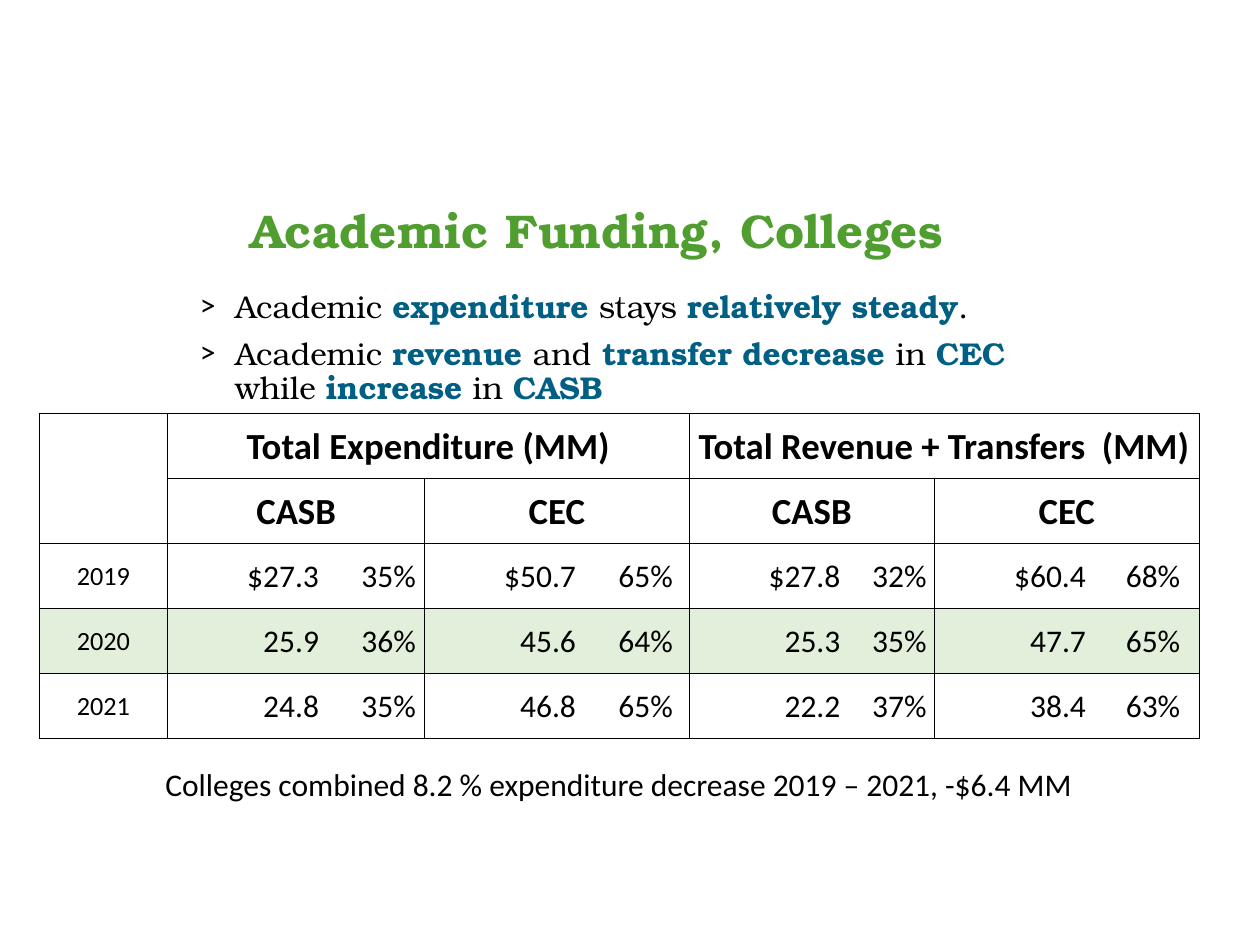
from lxml import etree
from pptx import Presentation
from pptx.dml.color import RGBColor
from pptx.enum.text import MSO_ANCHOR, MSO_AUTO_SIZE, PP_ALIGN
from pptx.oxml.ns import qn
from pptx.util import Cm, Pt

CENTER, LEFT = PP_ALIGN.CENTER, PP_ALIGN.LEFT
TOP, MIDDLE = MSO_ANCHOR.TOP, MSO_ANCHOR.MIDDLE
NO_AUTOFIT, GROW = MSO_AUTO_SIZE.NONE, MSO_AUTO_SIZE.SHAPE_TO_FIT_TEXT
SERIF, SANS = "TeX Gyre Bonum", "Calibri"
BLACK, BLUE, GREEN, PALE_GREEN = "000000", "005F83", "509E2F", "E2EFDA"


def write(paragraph, text, font=SANS, size=18, color=BLACK, bold=False, align=LEFT):
    """Add text to a paragraph; parts between asterisks become bold and blue."""
    paragraph.alignment = align
    for index, part in enumerate(text.split("*")):
        if part:
            run = paragraph.add_run()
            run.text = part
            run.font.name, run.font.size = font, Pt(size)
            run.font.bold = bold or index % 2 == 1
            run.font.color.rgb = RGBColor.from_string(BLUE if index % 2 else color)


def set_borders(cell, sides):
    """Draw thin black borders on the given sides and clear the others."""
    properties = cell._tc.get_or_add_tcPr()
    for side in "LRTB":
        line = etree.SubElement(properties, qn(f"a:ln{side}"), w=str(Pt(0.5)))
        if side in sides:
            fill = etree.SubElement(line, qn("a:solidFill"))
            etree.SubElement(fill, qn("a:srgbClr"), val=BLACK)
        else:
            etree.SubElement(line, qn("a:noFill"))


prs = Presentation()
prs.slide_width, prs.slide_height = Cm(25.4), Cm(19.05)
slide = prs.slides.add_slide(prs.slide_layouts[5])

# Title
title = slide.shapes.title
title.left, title.top, title.width, title.height = Cm(4.29), Cm(4.06), Cm(15.47), Cm(1.57)
title.text_frame.auto_size = NO_AUTOFIT
title.text_frame.vertical_anchor = TOP
heading = title.text_frame.paragraphs[0]
heading.line_spacing = 0.9
write(heading, "Academic Funding, Colleges", font=SERIF, size=27, color=GREEN,
      bold=True, align=CENTER)

# Funding table
column_widths = [2.59, 3.73, 1.45, 3.58, 1.75, 3.53, 1.42, 3.48, 1.85]
row_height = 1.31
funding = slide.shapes.add_table(5, 9, Cm(0.79), Cm(8.33),
                                 Cm(sum(column_widths)), Cm(5 * row_height)).table
funding.first_row = funding.horz_banding = False
for column, width in zip(funding.columns, column_widths):
    column.width = Cm(width)
for row in funding.rows:
    row.height = Cm(row_height)

# Headers: two groups of two colleges, each college over an amount and a share
headers = [(0, 1, 4, "Total Expenditure (MM)"), (0, 5, 4, "Total Revenue + Transfers  (MM)")]
headers += [(1, 1 + 2 * i, 2, college) for i, college in enumerate(["CASB", "CEC"] * 2)]
for row, first, span, label in headers:
    header = funding.cell(row, first)
    header.merge(funding.cell(row, first + span - 1))
    write(header.text_frame.paragraphs[0], label, size=21, bold=True, align=CENTER)

# Yearly values
years = [
    ["2019", "$27.3", "35%", "$50.7", "65%", "$27.8", "32%", "$60.4", "68%"],
    ["2020", "25.9", "36%", "45.6", "64%", "25.3", "35%", "47.7", "65%"],
    ["2021", "24.8", "35%", "46.8", "65%", "22.2", "37%", "38.4", "63%"],
]
for row, values in enumerate(years, start=2):
    for column, value in enumerate(values):
        paragraph = funding.cell(row, column).text_frame.paragraphs[0]
        if column % 2:  # amounts line up on the decimal point
            write(paragraph, "\t" + value)
            tabs = etree.SubElement(paragraph._p.get_or_add_pPr(), qn("a:tabLst"))
            etree.SubElement(tabs, qn("a:tab"), pos=str(Cm(2.54)), algn="dec")
        else:
            write(paragraph, value, size=18 if column else 15, align=CENTER)

# Cell margins, borders and the shaded 2020 row
for row in range(5):
    for column in range(9):
        cell = funding.cell(row, column)
        cell.vertical_anchor = MIDDLE
        cell.margin_left = cell.margin_right = cell.margin_top = Cm(0.03)
        cell.margin_bottom = 0
        if column == 0 and row < 2:
            sides = "LRT" if row == 0 else "LRB"
        elif column == 0 or row < 2:
            sides = "LRTB"
        else:
            sides = "LTB" if column % 2 else "RTB"
        set_borders(cell, sides)
        if row == 3:
            cell.fill.solid()
            cell.fill.fore_color.rgb = RGBColor.from_string(PALE_GREEN)
        else:
            cell.fill.background()

# Findings
findings = slide.shapes.add_textbox(Cm(3.78), Cm(5.74), Cm(17.81), Cm(4.88)).text_frame
findings.word_wrap = True
points = [
    "Academic *expenditure* stays *relatively steady*.",
    "Academic *revenue *and* transfer decrease *in *CEC* while *increase* in *CASB*",
]
for index, point in enumerate(points):
    paragraph = findings.add_paragraph() if index else findings.paragraphs[0]
    paragraph.line_spacing, paragraph.space_before = 0.9, Pt(7.5)
    write(paragraph, point, font=SERIF)
    properties = paragraph._p.get_or_add_pPr()
    properties.set("marL", str(Cm(0.71)))
    properties.set("indent", str(-Cm(0.71)))
    etree.SubElement(properties, qn("a:buFont"), typeface=SANS)
    etree.SubElement(properties, qn("a:buChar"), char=">")

# Summary line
summary = slide.shapes.add_textbox(Cm(2.97), Cm(15.29), Cm(19.02), Cm(1.02)).text_frame
summary.word_wrap = False
summary.auto_size = GROW
write(summary.paragraphs[0],
      "Colleges combined 8.2 % expenditure decrease 2019 – 2021, -$6.4 MM", align=CENTER)

prs.save("out.pptx")
